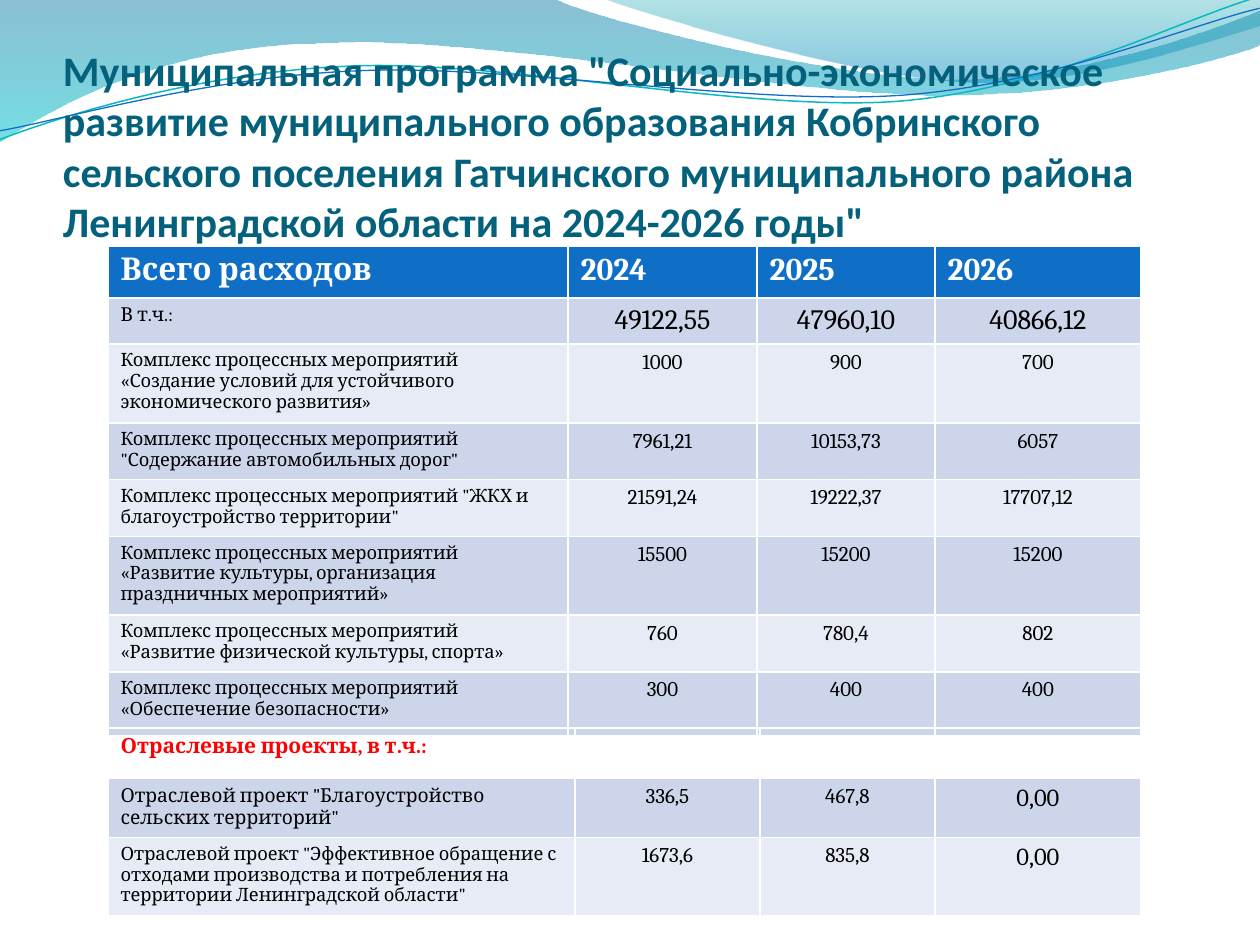
import dataclasses
import lxml.etree
import pptx
import pptx.dml.color
import pptx.enum.text
import pptx.oxml.ns
import pptx.util

SCALE = 914400 / 126


@dataclasses.dataclass(frozen=True)
class Theme:
    heading_font: str = "Calibri"
    table_font: str = "Cambria"
    title: str = "04617B"
    header: str = "0F6FC6"
    white: str = "FFFFFF"
    black: str = "000000"
    accent: str = "FF0000"
    bands: tuple = ("CCD5EA", "E7EBF5")
    back_wave: tuple = ((0, "0074A1", 45), (1, "00C6CF", 55))
    front_wave: tuple = ((0, "00A1A9", 30), (0.8, "008BBF", 45))
    teal_line: str = "0AB8BF"
    blue_line: str = "0F6FC6"
    title_size: float = 24
    header_size: float = 18
    total_size: float = 16
    zero_size: float = 14
    value_size: float = 12
    large_label: float = 11
    label_size: float = 10.5


THEME = Theme()

TITLE = (
    'Муниципальная программа "Социально-экономическое развитие муниципального '
    "образования Кобринского сельского поселения Гатчинского муниципального района "
    'Ленинградской области на 2024-2026 годы"'
)
PROCESS = "Комплекс процессных мероприятий "
EXPENSES = [
    ("Всего расходов", "2024", "2025", "2026"),
    ("В т.ч.:", "49122,55", "47960,10", "40866,12"),
    (PROCESS + "«Создание условий для устойчивого экономического развития»", "1000", "900", "700"),
    (PROCESS + '"Содержание автомобильных дорог"', "7961,21", "10153,73", "6057"),
    (PROCESS + '"ЖКХ и благоустройство территории"', "21591,24", "19222,37", "17707,12"),
    (PROCESS + "«Развитие культуры, организация праздничных мероприятий»", "15500", "15200", "15200"),
    (PROCESS + "«Развитие физической культуры, спорта»", "760", "780,4", "802"),
    (PROCESS + "«Обеспечение безопасности»", "300", "400", "400"),
]
PROJECTS = [
    ("Отраслевые проекты, в т.ч.:", "", "", ""),
    ('Отраслевой проект "Благоустройство сельских территорий"', "336,5", "467,8", "0,00"),
    (
        'Отраслевой проект "Эффективное обращение с отходами производства и потребления '
        'на территории Ленинградской области"', "1673,6", "835,8", "0,00",
    ),
]

BACK_WAVE = [
    (-1, -1), (554, -1),
    (600, 21, 837, 79, 955, 79), (1074, 79, 1207, 33, 1260, 11), (1261, 45),
    (1239, 55, 1096, 96, 940, 95), (784, 95, 481, 35, 324, 43),
    (163, 45, 58, 105, -1, 142),
]
FRONT_WAVE = [
    (604, -1), (641, 14, 859, 78, 969, 82), (1079, 87, 1211, 40, 1260, 26), (1260, 0),
]
TEAL_LINE = [
    (-3, 110), (58, 90, 199, 52, 350, 53), (499, 53, 745, 118, 896, 114),
    (1049, 109, 1184, 45, 1260, 27),
]
BLUE_LINE = [
    (-2, 101), (57, 94, 207, 57, 357, 58), (509, 58, 750, 112, 902, 108),
    (1052, 104, 1188, 52, 1262, 38),
]


def px(value):
    return pptx.util.Emu(round(value * SCALE))


def rgb(value):
    return pptx.dml.color.RGBColor.from_string(value)


def add_outline(slide, segments, close):
    points = [
        (px(x), px(y))
        for segment in segments
        for x, y in zip(segment[::2], segment[1::2])
    ]
    builder = slide.shapes.build_freeform(*points[0])
    builder.add_line_segments(points[1:], close=close)
    shape = builder.convert_to_shape()
    shape.shadow.inherit = False
    lines = iter(list(shape.element.iter(pptx.oxml.ns.qn("a:lnTo"))))
    for segment in segments[1:]:
        first = next(lines)
        if len(segment) == 6:
            first.tag = pptx.oxml.ns.qn("a:cubicBezTo")
            for line in (next(lines), next(lines)):
                first.append(line[0])
                line.getparent().remove(line)
    return shape


def add_wave(slide, segments, stops):
    shape = add_outline(slide, segments, True)
    shape.line.fill.background()
    shape.fill.gradient()
    shape.fill.gradient_angle = 270
    for stop, (position, color, _) in zip(shape.fill.gradient_stops, stops):
        stop.position = position
        stop.color.rgb = rgb(color)
    colors = shape.element.spPr.iterfind(".//" + pptx.oxml.ns.qn("a:srgbClr"))
    for color, (_, _, opacity) in zip(colors, stops):
        alpha = lxml.etree.SubElement(color, pptx.oxml.ns.qn("a:alpha"))
        alpha.set("val", str(opacity * 1000))


def add_wave_line(slide, segments, color, width):
    shape = add_outline(slide, segments, False)
    shape.rotation = 357.3
    shape.fill.background()
    shape.line.color.rgb = rgb(color)
    shape.line.width = pptx.util.Pt(width)


def format_text(paragraph, font_name, size, color, bold):
    for run in paragraph.runs:
        run.font.name = font_name
        run.font.size = pptx.util.Pt(size)
        run.font.color.rgb = rgb(color)
        run.font.bold = bold


def add_title(slide):
    shape = slide.shapes.add_textbox(px(63), px(97), px(1134), px(149))
    frame = shape.text_frame
    frame.word_wrap = True
    frame.vertical_anchor = pptx.enum.text.MSO_ANCHOR.BOTTOM
    frame.margin_left = frame.margin_right = frame.margin_bottom = 0
    frame.margin_top = px(6)
    frame.text = TITLE
    format_text(frame.paragraphs[0], THEME.heading_font, THEME.title_size, THEME.title, True)


def fill_cell(cell, color):
    if color:
        cell.fill.solid()
        cell.fill.fore_color.rgb = rgb(color)
    else:
        cell.fill.background()


def body_size(text, row, column):
    if column == 0:
        return THEME.large_label if row == 1 else THEME.label_size
    if text == "0,00":
        return THEME.zero_size
    return THEME.total_size if text == EXPENSES[1][column] else THEME.value_size


def add_budget_table(slide, top, height, rows, widths, heights,
                     header_fill, header_color, header_size):
    frame = slide.shapes.add_table(
        len(rows), len(widths), px(108), px(top), px(sum(widths)), px(height)
    )
    table = frame.table
    for column, width in zip(table.columns, widths):
        column.width = px(width)
    for row_index, (texts, row_height) in enumerate(zip(rows, heights)):
        table.rows[row_index].height = px(row_height)
        header = row_index == 0
        fill = header_fill if header else THEME.bands[(row_index - 1) % 2]
        for column_index, text in enumerate(texts):
            cell = table.cell(row_index, column_index)
            fill_cell(cell, fill)
            if not text:
                continue
            cell.text_frame.text = text
            paragraph = cell.text_frame.paragraphs[0]
            if column_index and not header:
                paragraph.alignment = pptx.enum.text.PP_ALIGN.CENTER
            size = header_size if header else body_size(text, row_index, column_index)
            color = header_color if header else THEME.black
            format_text(paragraph, THEME.table_font, size, color, header)
    frame.height = px(height)


def main():
    presentation = pptx.Presentation()
    presentation.slide_width = px(1260)
    presentation.slide_height = px(945)
    slide = presentation.slides.add_slide(presentation.slide_layouts[6])
    add_wave(slide, BACK_WAVE, THEME.back_wave)
    add_wave(slide, FRONT_WAVE, THEME.front_wave)
    add_wave_line(slide, TEAL_LINE, THEME.teal_line, 0.85)
    add_wave_line(slide, BLUE_LINE, THEME.blue_line, 0.75)
    add_title(slide)
    add_budget_table(slide, 246, 489, EXPENSES, (460, 189, 178, 206),
                     (52, 45, 77, 55, 55, 77, 55, 64),
                     THEME.header, THEME.white, THEME.header_size)
    add_budget_table(slide, 728, 188, PROJECTS, (467, 185, 175, 206), (25, 52, 52),
                     None, THEME.accent, THEME.value_size)
    presentation.save("out.pptx")


if __name__ == "__main__":
    main()
